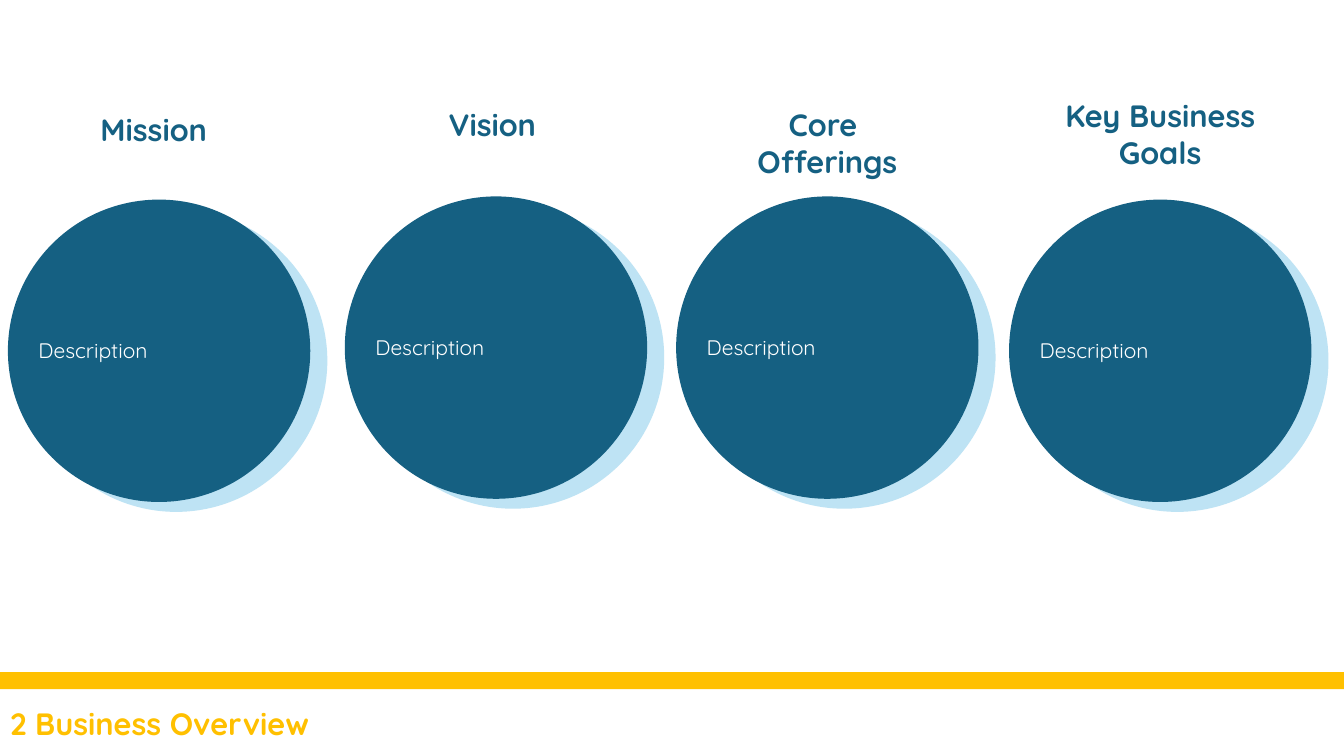
from pptx import Presentation
from pptx.dml.color import RGBColor
from pptx.enum.shapes import MSO_SHAPE
from pptx.enum.text import MSO_ANCHOR, MSO_AUTO_SIZE, PP_ALIGN
from pptx.util import Cm, Pt

OVAL, RECT = MSO_SHAPE.OVAL, MSO_SHAPE.RECTANGLE
LEFT, CENTER = PP_ALIGN.LEFT, PP_ALIGN.CENTER
TOP, GROW = MSO_ANCHOR.TOP, MSO_AUTO_SIZE.SHAPE_TO_FIT_TEXT

FONT = "Quicksand"
BLUE, PALE, GOLD, WHITE = "156082", "BEE3F4", "FFC000", "FFFFFF"
SLIDE_W, SLIDE_H = 33.87, 19.05
DIAMETER = 7.62

# Heading, heading box (left, top, width, height), circle left, circle top
TOPICS = [
    ("Mission", (0.89, 2.67, 5.97, 1.19), 0.2, 5.03),
    ("Vision", (8.51, 2.54, 7.8, 1.19), 8.69, 4.95),
    ("Core \vOfferings", (17.04, 2.54, 7.62, 2.13), 17.04, 4.95),
    ("Key Business\vGoals", (25.43, 2.31, 7.62, 2.13), 25.43, 5.03),
]


def color(value):
    """Turn a hex string into a colour."""
    return RGBColor.from_string(value)


def add_block(s, kind, x, y, w, h, fill):
    """Add a plain filled shape without outline."""
    sp = s.shapes.add_shape(kind, Cm(x), Cm(y), Cm(w), Cm(h))
    sp.shadow.inherit = False
    sp.fill.solid()
    sp.fill.fore_color.rgb = color(fill)
    sp.line.fill.background()


def set_text(sp, text, size, hue, bold=False, align=LEFT):
    """Write one formatted paragraph into a shape."""
    tf = sp.text_frame
    tf.word_wrap = True
    tf.auto_size = GROW
    tf.vertical_anchor = TOP
    p = tf.paragraphs[0]
    p.text = text
    p.alignment = align
    p.line_spacing = 1.0
    for r in p.runs:
        r.font.name = FONT
        r.font.size = Pt(size)
        r.font.bold = bold
        r.font.color.rgb = color(hue)


def add_label(s, x, y, w, h, text, size, hue, bold=False, align=LEFT):
    """Add a text box."""
    sp = s.shapes.add_textbox(Cm(x), Cm(y), Cm(w), Cm(h))
    set_text(sp, text, size, hue, bold, align)


def add_topic(s, heading, box, x, y):
    """Add a heading above a circle with its offset backing and description."""
    add_block(s, OVAL, x + 0.43, y + 0.25, DIAMETER, DIAMETER, PALE)
    add_block(s, OVAL, x, y, DIAMETER, DIAMETER, BLUE)
    add_label(s, *box, heading, 22, BLUE, True, CENTER)
    add_label(s, x + 0.52, y + 3.36, 5.64, 0.89, "Description", 15, WHITE)


def add_title(s, text):
    """Place the slide title below the gold bar."""
    sp = s.shapes.title
    sp.left, sp.top, sp.width, sp.height = Cm(0), Cm(17.63), Cm(23.29), Cm(1.19)
    set_text(sp, text, 22, GOLD, True)


def main():
    """Build and save the slide."""
    prs = Presentation()
    prs.slide_width, prs.slide_height = Cm(SLIDE_W), Cm(SLIDE_H)
    s = prs.slides.add_slide(prs.slide_layouts[5])
    for topic in TOPICS:
        add_topic(s, *topic)
    add_block(s, RECT, 0, 16.94, SLIDE_W, 0.43, GOLD)
    add_title(s, "2 Business Overview")
    prs.save("out.pptx")


if __name__ == "__main__":
    main()
